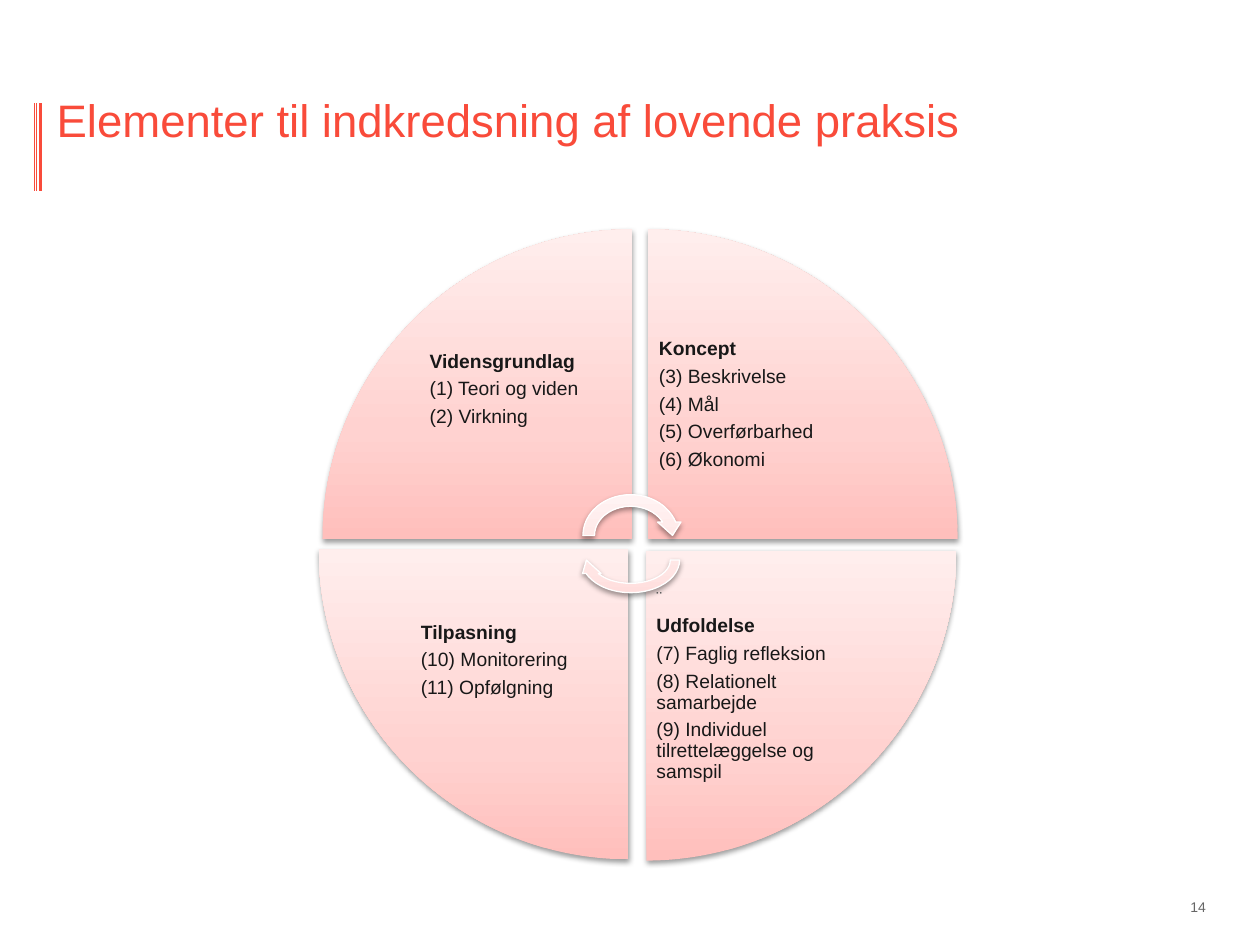
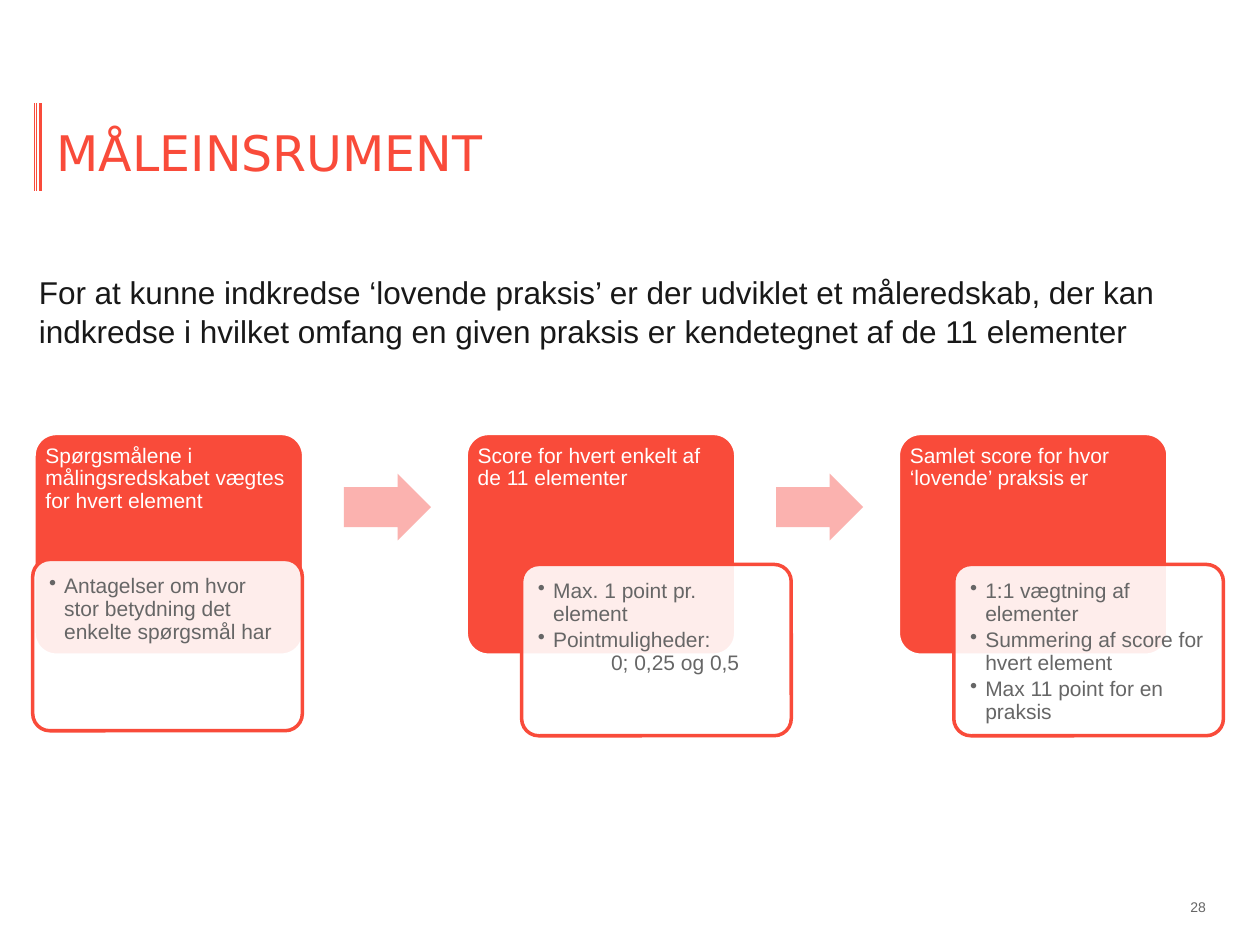
from lxml import etree
from pptx import Presentation
from pptx.dml.color import RGBColor
from pptx.enum.shapes import MSO_CONNECTOR, MSO_SHAPE
from pptx.enum.text import MSO_ANCHOR, MSO_AUTO_SIZE, PP_ALIGN
from pptx.oxml.ns import qn
from pptx.util import Inches, Pt

WEDGE, CURVED_ARROW = MSO_SHAPE.PIE_WEDGE, MSO_SHAPE.CIRCULAR_ARROW
ROUND_BOX, ARROW = MSO_SHAPE.ROUNDED_RECTANGLE, MSO_SHAPE.RIGHT_ARROW
STRAIGHT, TOP, NO_FIT = MSO_CONNECTOR.STRAIGHT, MSO_ANCHOR.TOP, MSO_AUTO_SIZE.NONE
LEFT, RIGHT = PP_ALIGN.LEFT, PP_ALIGN.RIGHT

RED, PINK, WHITE, INK, GREY = "F94B3A", "FBB2AF", "FFFFFF", "181818", "666666"
WEDGE_STOPS = [(0, "FFBFBC"), (35, "FFD2D0"), (100, "FFEEED")]
CYCLE_STOPS = [(0, "FFDBDA"), (35, "FFE5E4"), (100, "FFF5F5")]
BARS = [(0.32, 1.5), (0.29, 1), (0.27, 0.5)]

QUADRANTS = [
    ((2.56, 1.82), 0, (3.41, 2.79), ["Vidensgrundlag", "(1) Teori og viden", "(2) Virkning"]),
    ((5.14, 1.82), 90, (5.23, 2.69),
     ["Koncept", "(3) Beskrivelse", "(4) Mål", "(5) Overførbarhed", "(6) Økonomi"]),
    ((5.13, 4.37), 180, (5.21, 4.89),
     ["Udfoldelse", "(7) Faglig refleksion", "(8) Relationelt samarbejde",
      "(9) Individuel tilrettelæggelse og samspil"]),
    ((2.53, 4.36), 270, (3.34, 4.94), ["Tilpasning", "(10) Monitorering", "(11) Opfølgning"]),
]
STEPS = [
    ("Spørgsmålene i målingsredskabet vægtes for hvert element", (0.26, 4.44),
     ["Antagelser om hvor stor betydning det enkelte spørgsmål har"]),
    ("Score for hvert enkelt af de 11 elementer", (4.14, 4.48),
     ["Max. 1 point pr. element", "Pointmuligheder:\v\t0; 0,25 og 0,5"]),
    ("Samlet score for hvor ‘lovende’ praksis er", (7.57, 4.48),
     ["1:1 vægtning af elementer", "Summering af score for hvert element",
      "Max 11 point for en praksis"]),
]


def rgb(value):
    return RGBColor.from_string(value)


def sub(parent, tag, **attrs):
    return etree.SubElement(parent, qn(tag), {k: str(v) for k, v in attrs.items()})


class Deck:
    """Holds the shared style and draws elements on the current slide."""

    def __init__(self):
        self.prs = Presentation()
        self.prs.slide_width, self.prs.slide_height = Inches(10), Inches(7.5)
        self.s = None

    def slide(self, title, number, box, **font):
        self.s = self.prs.slides.add_slide(self.prs.slide_layouts[5])
        for x, width in BARS:
            self.line(x, 0.82, x, 1.52, width)
        sp = self.s.shapes.title
        sp.left, sp.top, sp.width, sp.height = map(Inches, box)
        self.fill_text(sp.text_frame, [title], insets=(0.1, 0.05, 0.1, 0.05), color=RED, **font)
        self.text((8.7, 7.08, 0.97, 0.25), [number], insets=(0.1, 0.05, 0.1, 0.05),
                  size=8, color=GREY, align=RIGHT)

    def line(self, x1, y1, x2, y2, width):
        c = self.s.shapes.add_connector(STRAIGHT, *map(Inches, (x1, y1, x2, y2)))
        c.line.color.rgb, c.line.width = rgb(RED), Pt(width)
        sub(c._element.spPr, "a:effectLst")

    def shape(self, kind, box, fill=None, stops=None, line=None, width=2, rotation=0,
              adjust=(), alpha=None):
        sp = self.s.shapes.add_shape(kind, *map(Inches, box))
        sp.rotation, sp.shadow.inherit = rotation, False
        for i, value in enumerate(adjust):
            sp.adjustments[i] = value
        if line:
            sp.line.color.rgb, sp.line.width = rgb(line), Pt(width)
        else:
            sp.line.fill.background()
        if stops:
            self.gradient(sp, stops)
            self.shadow(sp)
        else:
            sp.fill.solid()
            sp.fill.fore_color.rgb = rgb(fill)
        if alpha:
            color = sp._element.spPr.find(qn("a:solidFill"))[0]
            sub(color, "a:alpha", val=alpha * 1000)
        return sp

    def gradient(self, sp, stops):
        grad = etree.Element(qn("a:gradFill"), rotWithShape="0")
        gs_list = sub(grad, "a:gsLst")
        for pos, color in stops:
            sub(sub(gs_list, "a:gs", pos=pos * 1000), "a:srgbClr", val=color)
        sub(grad, "a:lin", ang=270 * 60000, scaled=0)
        sp._element.spPr.find(qn("a:prstGeom")).addnext(grad)

    def shadow(self, sp):
        effects = sp._element.spPr.find(qn("a:effectLst"))
        outer = sub(effects, "a:outerShdw", blurRad=Pt(3.1), dist=Pt(1.6),
                    dir=90 * 60000, rotWithShape=0)
        sub(sub(outer, "a:srgbClr", val="000000"), "a:alpha", val=38000)

    def text(self, box, lines, **style):
        sp = self.s.shapes.add_textbox(*map(Inches, box))
        self.fill_text(sp.text_frame, lines, **style)

    def fill_text(self, tf, lines, size, color, insets=(0, 0, 0, 0), font="Arial", align=LEFT,
                  spacing=1, after=0, heading=False, bullets=False):
        sides = ("margin_left", "margin_top", "margin_right", "margin_bottom")
        frame = {"word_wrap": True, "auto_size": NO_FIT, "vertical_anchor": TOP,
                 **dict(zip(sides, map(Inches, insets)))}
        for name, value in frame.items():
            setattr(tf, name, value)
        for i, content in enumerate(lines):
            p = tf.add_paragraph() if i else tf.paragraphs[0]
            p.text = content
            paragraph = {"alignment": align, "line_spacing": spacing,
                         "space_before": Pt(0), "space_after": Pt(after)}
            for name, value in paragraph.items():
                setattr(p, name, value)
            if bullets:
                self.bullet(p)
            run = {"name": font, "size": Pt(size), "bold": heading and i == 0}
            for r in p.runs:
                for name, value in run.items():
                    setattr(r.font, name, value)
                r.font.color.rgb = rgb(color)

    def bullet(self, p):
        pPr = p._p.get_or_add_pPr()
        pPr.set("marL", str(Inches(0.12)))
        pPr.set("indent", str(Inches(-0.12)))
        sub(pPr, "a:buChar", char="•")
        sub(sub(pPr, "a:tabLst"), "a:tab", pos=Inches(0.58), algn="l")


def cycle_slide(deck):
    deck.slide("Elementer til indkredsning af lovende praksis", "14",
               (0.35, 0.68, 9.32, 0.94), size=26)
    for (x, y), rotation, (text_x, text_y), lines in QUADRANTS:
        deck.shape(WEDGE, (x, y, 2.46, 2.46), stops=WEDGE_STOPS, rotation=rotation)
        deck.text((text_x, text_y, 1.58, 1.4), lines, size=11, color=INK,
                  spacing=0.9, after=4, heading=True)
    deck.text((5.21, 4.68, 0.3, 0.18), ["¨"], size=10, color=GREY, spacing=0.9)
    for y, height, rotation in [(3.88, 0.74, 0), (4.15, 0.59, 180)]:
        deck.shape(CURVED_ARROW, (4.58, y, 0.85, height), stops=CYCLE_STOPS,
                   line=WHITE, width=0.75, rotation=rotation)


def process_slide(deck):
    deck.slide("MÅLEINSRUMENT", "28", (0.35, 0.92, 5, 0.57), size=28, font="DejaVu Sans")
    deck.text((0.21, 2.1, 9.55, 0.71),
              ["For at kunne indkredse ‘lovende praksis’ er der udviklet et måleredskab, der kan "
               "indkredse i hvilket omfang en given praksis er kendetegnet af de 11 elementer"],
              size=18, color=INK, insets=(0.1, 0.05, 0.1, 0.05), spacing=1.05)
    for i, (heading, (x, y), details) in enumerate(STEPS):
        left = 0.27 + 3.43 * i
        if i:
            deck.shape(ARROW, (left - 0.97, 3.76, 0.69, 0.53), fill=PINK, adjust=(0.6, 0.5))
        head = deck.shape(ROUND_BOX, (left, 3.44, 2.14, 1.76), fill=RED, line=WHITE,
                          adjust=(0.1,))
        deck.fill_text(head.text_frame, [heading], size=12, color=WHITE, spacing=0.9,
                       insets=(0.04, 0.04, 0.04, 0.05))
        body = deck.shape(ROUND_BOX, (x, y, 2.14, 1.36), fill=WHITE, line=RED,
                          adjust=(0.1,), alpha=90)
        deck.fill_text(body.text_frame, details, size=12, color=GREY, spacing=0.9, after=2,
                       insets=(0.09, 0.09, 0.09, 0.09), bullets=True)


def main():
    deck = Deck()
    cycle_slide(deck)
    process_slide(deck)
    deck.prs.save("out.pptx")


if __name__ == "__main__":
    main()
